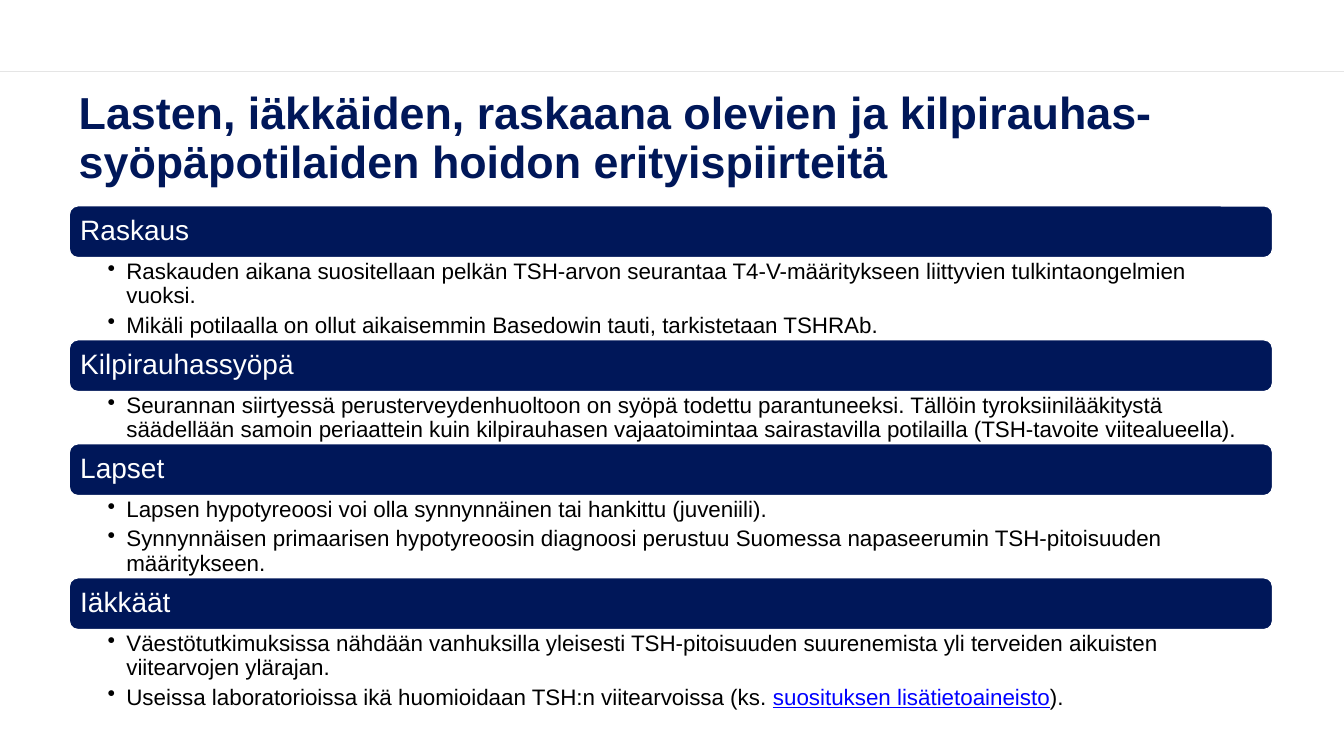
"""Builds the slide on thyroid care in special patient groups."""
from pptx import Presentation
from pptx.dml.color import RGBColor
from pptx.enum.shapes import MSO_CONNECTOR as Connector, MSO_SHAPE as Shape
from pptx.enum.text import MSO_ANCHOR as Anchor, MSO_AUTO_SIZE as AutoSize, PP_ALIGN as Align
from pptx.oxml.ns import qn
from pptx.util import Pt
from lxml.etree import SubElement

NAVY = RGBColor(0x00, 0x17, 0x59)
WHITE = RGBColor(0xFF, 0xFF, 0xFF)
BLACK = RGBColor(0x00, 0x00, 0x00)
BLUE = RGBColor(0x00, 0x00, 0xFF)
PALE_GREY = RGBColor(0xE5, 0xE5, 0xE5)

PAGE_WIDTH, PAGE_HEIGHT = 960, 540
LEFT, WIDTH = 49.5, 859.5
FIRST_TOP, BANNER_HEIGHT = 147, 37
LINE_HEIGHT = {2: 37.3, 3: 58.7}

TITLE = "Lasten, iäkkäiden, raskaana olevien ja kilpirauhas-syöpäpotilaiden hoidon erityispiirteitä"
SECTIONS = [
    ("Raskaus", 3, [
        ["Raskauden aikana suositellaan pelkän TSH-arvon seurantaa T4-V-määritykseen "
         "liittyvien tulkintaongelmien vuoksi."],
        ["Mikäli potilaalla on ollut aikaisemmin Basedowin tauti, tarkistetaan TSHRAb."],
    ]),
    ("Kilpirauhassyöpä", 2, [
        ["Seurannan siirtyessä perusterveydenhuoltoon on syöpä todettu parantuneeksi. "
         "Tällöin tyroksiinilääkitystä säädellään samoin periaattein kuin kilpirauhasen "
         "vajaatoimintaa sairastavilla potilailla (TSH-tavoite viitealueella)."],
    ]),
    ("Lapset", 3, [
        ["Lapsen hypotyreoosi voi olla synnynnäinen tai hankittu (juveniili)."],
        ["Synnynnäisen primaarisen hypotyreoosin diagnoosi perustuu Suomessa napaseerumin "
         "TSH-pitoisuuden määritykseen."],
    ]),
    ("Iäkkäät", 3, [
        ["Väestötutkimuksissa nähdään vanhuksilla yleisesti TSH-pitoisuuden suurenemista "
         "yli terveiden aikuisten viitearvojen ylärajan."],
        ["Useissa laboratorioissa ikä huomioidaan TSH:n viitearvoissa (ks. ",
         "suosituksen lisätietoaineisto", ")."],
    ]),
]


class SlideBuilder:
    def __init__(self, page, font_name):
        self.page = page
        self.font_name = font_name

    def style(self, para, size, color, bold=False):
        para.alignment = Align.LEFT
        para.line_spacing = 0.9
        font = para.font
        font.name, font.size, font.bold = self.font_name, Pt(size), bold
        font.color.rgb = color

    def frame(self, shape, anchor, left, top, right, bottom):
        frame = shape.text_frame
        frame.word_wrap = True
        frame.auto_size = AutoSize.NONE
        frame.vertical_anchor = anchor
        frame.margin_left, frame.margin_top = Pt(left), Pt(top)
        frame.margin_right, frame.margin_bottom = Pt(right), Pt(bottom)
        return frame

    def rule(self, top):
        line = self.page.shapes.add_connector(
            Connector.STRAIGHT, Pt(0), Pt(top), Pt(PAGE_WIDTH), Pt(top))
        line.line.color.rgb = PALE_GREY
        line.line.width = Pt(1)
        SubElement(line._element.spPr, qn("a:effectLst"))

    def title(self, text):
        box = self.page.shapes.title
        box.left, box.top, box.width, box.height = Pt(49), Pt(67), Pt(860), Pt(65.5)
        frame = self.frame(box, Anchor.MIDDLE, 7.2, 3.6, 7.2, 3.6)
        frame.text = text
        self.style(frame.paragraphs[0], 32, NAVY, bold=True)

    def banner(self, top, text):
        bar = self.page.shapes.add_shape(
            Shape.ROUNDED_RECTANGLE, Pt(LEFT), Pt(top), Pt(WIDTH), Pt(BANNER_HEIGHT))
        bar.shadow.inherit = False
        bar.fill.solid()
        bar.fill.fore_color.rgb = NAVY
        bar.line.color.rgb = WHITE
        bar.line.width = Pt(1)
        frame = self.frame(bar, Anchor.MIDDLE, 6, 6, 6, 6)
        frame.text = text
        self.style(frame.paragraphs[0], 20, WHITE)

    def bullets(self, top, height, items):
        box = self.page.shapes.add_textbox(Pt(LEFT), Pt(top), Pt(WIDTH), Pt(height))
        frame = self.frame(box, Anchor.TOP, 27.3, 2, 11.4, 2)
        for index, spans in enumerate(items):
            para = frame.paragraphs[0] if index == 0 else frame.add_paragraph()
            properties = para._p.get_or_add_pPr()
            properties.set("marL", str(Pt(13.5)))
            properties.set("indent", str(-Pt(13.5)))
            SubElement(properties, qn("a:buChar"), char="•")
            self.style(para, 16, BLACK)
            para.space_after = Pt(3.6)
            for position, text in enumerate(spans):
                span = para.add_run()
                span.text = text
                if position == 1:
                    span.font.color.rgb = BLUE
                    span.font.underline = True


def main():
    deck = Presentation()
    deck.slide_width, deck.slide_height = Pt(PAGE_WIDTH), Pt(PAGE_HEIGHT)
    builder = SlideBuilder(deck.slides.add_slide(deck.slide_layouts[5]), "Arial")
    builder.rule(51)
    builder.title(TITLE)
    top = FIRST_TOP
    for heading, line_count, items in SECTIONS:
        height = LINE_HEIGHT[line_count]
        builder.banner(top, heading)
        builder.bullets(top + BANNER_HEIGHT, height, items)
        top += BANNER_HEIGHT + height
    deck.save("out.pptx")


if __name__ == "__main__":
    main()
